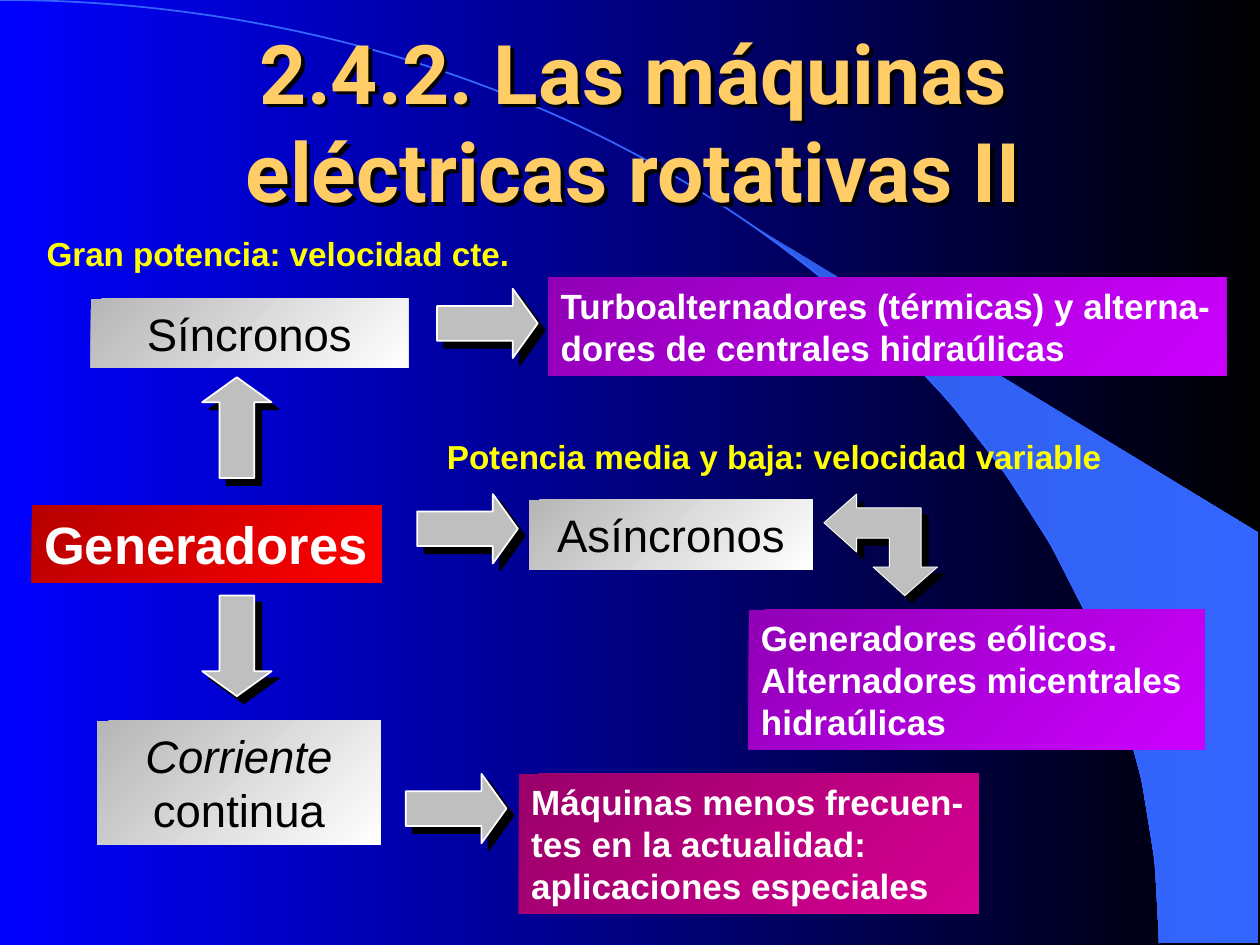
"""Build the slide on rotating electrical machines: generator types and their uses."""
from dataclasses import dataclass
from math import cos, radians, sin

from lxml.etree import SubElement
from pptx import Presentation
from pptx.dml.color import RGBColor as RGB
from pptx.enum.shapes import MSO_SHAPE as Shape
from pptx.enum.text import MSO_ANCHOR as Anchor, PP_ALIGN as Align
from pptx.oxml.ns import qn
from pptx.util import Cm, Pt


@dataclass(frozen=True)
class Theme:
    night: tuple = ("0000FF", "000000")
    wave: tuple = ("2E5DE7", "3366FF")
    arc: str = "3366FF"
    red: str = "FF0000"
    grey: str = "FFFFFF"
    violet: str = "CC00FF"
    pink: str = "D60093"
    arrow: str = "BFBFBF"
    gold: str = "FFCC66"
    yellow: str = "FFFF00"
    white: str = "FFFFFF"
    black: str = "000000"
    title: int = 47
    root: int = 30
    kind: int = 26
    use: int = 20
    note: int = 19


theme = Theme()


def blend(fill, pair, angle):
    fill.gradient()
    fill.gradient_angle = angle
    for stop, tint in zip(fill.gradient_stops, pair):
        stop.color.rgb = RGB.from_string(tint)


def write(shape, runs, size, tint, align=Align.LEFT, **extra):
    frame = shape.text_frame
    frame.word_wrap = True
    frame.vertical_anchor = Anchor.MIDDLE
    para = frame.paragraphs[0]
    para.alignment = align
    for text, slant in runs:
        run = para.add_run()
        run.text = text
        style = {"name": "Arial", "size": Pt(size), "bold": True, "italic": slant}
        for key, value in (style | extra).items():
            setattr(run.font, key, value)
        run.font.color.rgb = RGB.from_string(tint)


deck = Presentation()
deck.slide_width, deck.slide_height = Cm(25.4), Cm(19.05)
slide = deck.slides.add_slide(deck.slide_layouts[6])
blend(slide.background.fill, theme.night, 0)
shapes = slide.shapes

turns = [radians(a) for a in range(40, 91, 5)]
wave = [(23.37 * sin(a), 19.02 * (1 - cos(a))) for a in turns]
wave += [(25.37, 19.02), (25.37, 10.74)]
curve = [(0, 0), (12.9, 0), (23.37, 8.51), (23.37, 19.02)]
bend = [
    (16.61, 10.54), (17.27, 11.13), (17.27, 10.85), (17.93, 10.85),
    (17.93, 11.43), (17.6, 11.43), (18.24, 12.01), (18.9, 11.43),
    (18.57, 11.43), (18.57, 10.24), (17.27, 10.24), (17.27, 9.96),
]
forms = []
for points, close in ((wave, True), (curve, False), (bend, True)):
    spots = [(Cm(x), Cm(y)) for x, y in points]
    pen = shapes.build_freeform(*spots[0])
    pen.add_line_segments(spots[1:], close=close)
    form = pen.convert_to_shape()
    form.shadow.inherit = False
    forms.append(form)
swoosh, arc, elbow = forms
blend(swoosh.fill, theme.wave, 0)
swoosh.line.fill.background()
arc.fill.background()
arc.line.color.rgb = RGB.from_string(theme.arc)
arc.line.width = Pt(1)
track = next(arc.element.iter(qn("a:path")))
lines = list(track.iter(qn("a:lnTo")))
cubic = SubElement(track, qn("a:cubicBezTo"))
for line in lines:
    cubic.append(line[0])
    track.remove(line)

roots = {"size": theme.root, "tint": theme.white}
kinds = {"size": theme.kind, "tint": theme.black, "align": Align.CENTER, "bold": False}
uses = {"size": theme.use, "tint": theme.white}
boxes = [
    ((0.64, 10.19, 7.06, 1.55), theme.red, roots, [("Generadores", False)]),
    ((1.83, 6.02, 6.4, 1.4), theme.grey, kinds, [("Síncronos", False)]),
    ((10.67, 10.08, 5.72, 1.4), theme.grey, kinds, [("Asíncronos", False)]),
    ((1.96, 14.53, 5.72, 2.49), theme.grey, kinds,
     [("Corriente ", True), ("continua", False)]),
    ((11.05, 5.59, 13.67, 1.98), theme.violet, uses,
     [("Turboalternadores (térmicas) y alterna-dores de centrales hidraúlicas", False)]),
    ((15.09, 12.29, 9.19, 2.82), theme.violet, uses,
     [("Generadores eólicos. Alternadores micentrales hidraúlicas", False)]),
    ((10.46, 15.6, 9.27, 2.82), theme.pink, uses,
     [("Máquinas menos frecuen-tes en la actualidad: aplicaciones especiales", False)]),
]
for place, tint, style, runs in boxes:
    box = shapes.add_shape(Shape.RECTANGLE, *map(Cm, place))
    box.shadow.inherit = False
    box.line.fill.background()
    blend(box.fill, (tint, tint), 315)
    SubElement(next(box.element.iter(qn("a:srgbClr"))), qn("a:shade"), val="46275")
    write(box, runs, **style)

arrows = [(elbow, 0.5)]
for left, top, turn in (
    (8.41, 9.96, 0), (3.76, 7.92, 270), (8.81, 5.82, 0), (3.76, 12.32, 90), (8.18, 15.6, 0),
):
    arrow = shapes.add_shape(Shape.RIGHT_ARROW, Cm(left), Cm(top), Cm(2.03), Cm(1.4))
    arrow.rotation = turn
    arrow.adjustments[0], arrow.adjustments[1] = 0.5, 0.36
    arrow.shadow.inherit = False
    arrows.append((arrow, 1))
for arrow, width in arrows:
    arrow.fill.solid()
    arrow.fill.fore_color.rgb = RGB.from_string(theme.arrow)
    arrow.line.color.rgb = RGB.from_string(theme.white)
    arrow.line.width = Pt(width)

notes = {"size": theme.note, "tint": theme.yellow}
heads = {"size": theme.title, "tint": theme.gold, "align": Align.CENTER, "name": "Roboto"}
labels = [
    ((0.69, 4.57, 10.62, 1.07), notes, "Gran potencia: velocidad cte."),
    ((8.76, 8.66, 14.38, 1.07), notes, "Potencia media y baja: velocidad variable"),
    ((2.06, 0.84, 21.44, 3.18), heads, "2.4.2. Las máquinas eléctricas rotativas II"),
]
for place, style, text in labels:
    label = shapes.add_textbox(*map(Cm, place))
    write(label, [(text, False)], **style)
label.shadow.inherit = False

for shape, gap in [(arrow, 5.7) for arrow, width in arrows] + [(label, 3)]:
    holder = next(shape.element.iter(qn("a:effectLst")))
    cast = SubElement(holder, qn("a:outerShdw"), dist=str(Pt(gap)), dir="2700000", algn="ctr")
    SubElement(cast, qn("a:srgbClr"), val=theme.black)

deck.save("out.pptx")
